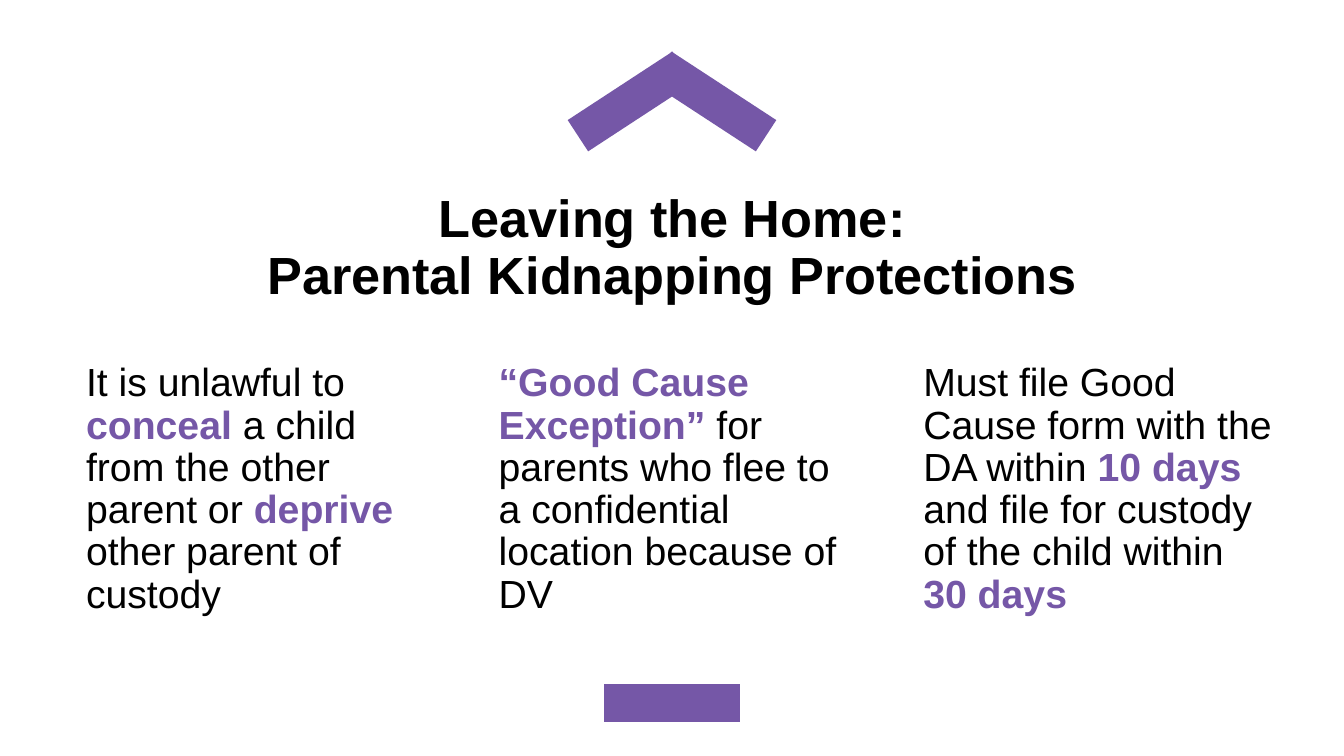
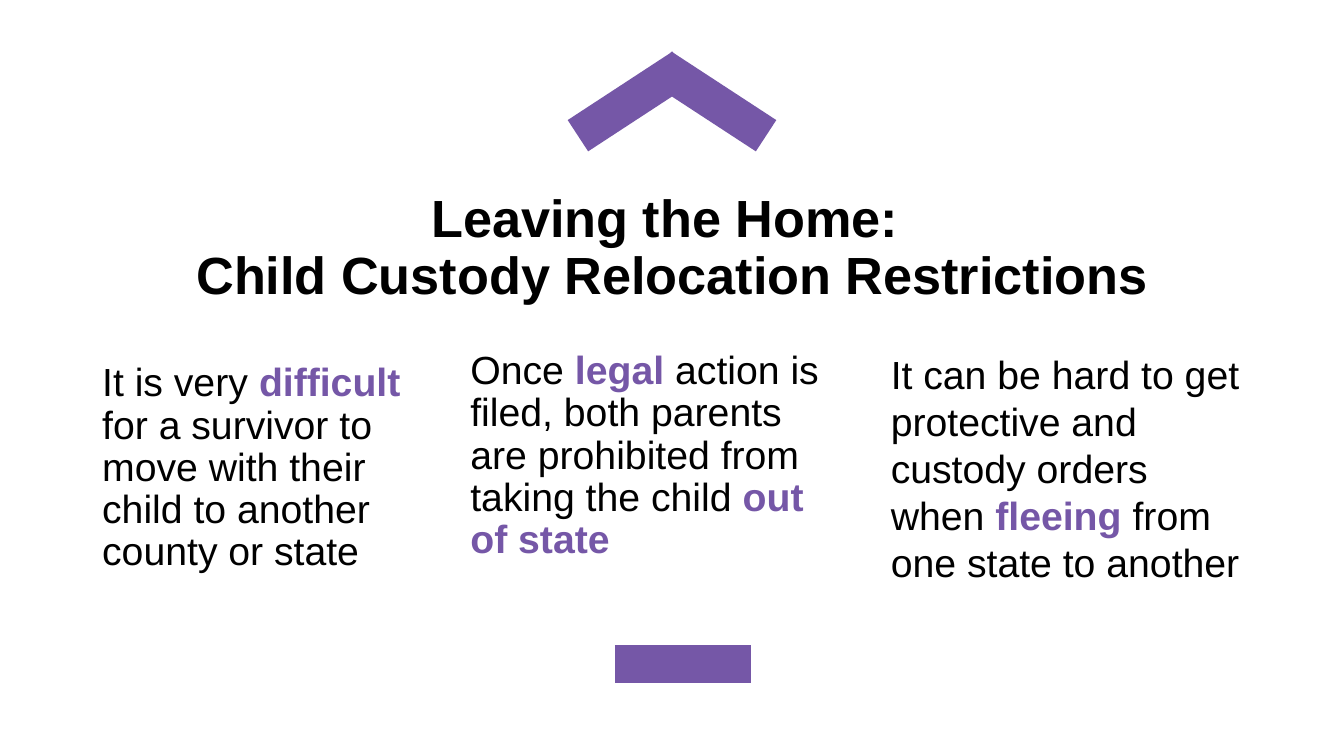
import lxml.etree
import pptx
import pptx.dml.color
import pptx.enum.shapes
import pptx.enum.text
import pptx.oxml.ns
import pptx.util

Inches = pptx.util.Inches
Pt = pptx.util.Pt
FONT = "Arial"
PURPLE = "7557A7"
BLACK = "000000"
TIGHT = (0.07, 0.04)
LOOSE = (0.1, 0.05)
BAR_WIDTH = 1.01


def rgb(value):
    return pptx.dml.color.RGBColor.from_string(value)


def set_frame(tf, insets, anchor):
    tf.word_wrap = True
    tf.auto_size = pptx.enum.text.MSO_AUTO_SIZE.NONE
    tf.vertical_anchor = anchor
    tf.margin_left = tf.margin_right = Inches(insets[0])
    tf.margin_top = tf.margin_bottom = Inches(insets[1])


def place(sp, left, top, width, height):
    sp.left, sp.top = Inches(left), Inches(top)
    sp.width, sp.height = Inches(width), Inches(height)


def add_title(s, text):
    sp = s.shapes.title
    place(sp, 0.69, 1.31, 8.62, 1.09)
    tf = sp.text_frame
    set_frame(tf, TIGHT, pptx.enum.text.MSO_ANCHOR.MIDDLE)
    p = tf.paragraphs[0]
    p.text = text
    p.alignment = pptx.enum.text.PP_ALIGN.CENTER
    p.line_spacing = 0.9
    p.font.name, p.font.size, p.font.bold = FONT, Pt(28), True
    p.font.color.rgb = rgb(BLACK)


def add_column(s, box, text, insets=TIGHT, line_spacing=0.9, space_before=7.5):
    tf = s.shapes.add_textbox(*map(Inches, box)).text_frame
    set_frame(tf, insets, pptx.enum.text.MSO_ANCHOR.TOP)
    p = tf.paragraphs[0]
    p.line_spacing = line_spacing
    p.space_before = Pt(space_before)
    p.font.name, p.font.size = FONT, Pt(21)
    for i, part in enumerate(text.split("*")):
        if part:
            key = i % 2 == 1
            r = p.add_run()
            r.text = part
            r.font.bold = key
            r.font.color.rgb = rgb(PURPLE if key else BLACK)


def add_bar(shapes, x1, y1, x2, y2):
    line = shapes.add_connector(
        pptx.enum.shapes.MSO_CONNECTOR.STRAIGHT,
        Inches(x1), Inches(y1), Inches(x2), Inches(y2))
    line.line.color.rgb = rgb(PURPLE)
    line.line.width = Pt(20)
    lxml.etree.SubElement(line._element.spPr, pptx.oxml.ns.qn("a:effectLst"))


def add_chevron(s):
    group = s.shapes.add_group_shape()
    for start, end in ((4.92, 5.7), (5.08, 4.3)):
        add_bar(group.shapes, start, 0.5, end, 1.01)


def add_slide(prs, title, bar_center, bar_y):
    s = prs.slides.add_slide(prs.slide_layouts[5])
    add_title(s, title)
    add_chevron(s)
    half = BAR_WIDTH / 2
    add_bar(s.shapes, bar_center - half, bar_y, bar_center + half, bar_y)
    return s


def main():
    prs = pptx.Presentation()
    prs.slide_width = Inches(10)
    prs.slide_height = prs.slide_width * 9 // 16

    s = add_slide(prs, "Leaving the Home:\vParental Kidnapping Protections", 5, 5.23)
    add_column(s, (0.57, 2.66, 2.58, 2.24),
               "It is unlawful to *conceal* a child from the other parent or "
               "*deprive *other parent of custody")
    add_column(s, (3.64, 2.66, 2.79, 2.24),
               "*“Good Cause Exception”* for parents who flee to a confidential "
               "location because of DV")
    add_column(s, (6.8, 2.66, 2.77, 2.24),
               "Must file Good Cause form with the DA within *10 days *and file "
               "for custody of the child within *30 days*")

    s = add_slide(prs, "Leaving the Home: \vChild Custody Relocation Restrictions", 5.08, 4.94)
    add_column(s, (0.69, 2.66, 2.41, 2.24),
               "It is very *difficult* for a survivor to move with their child "
               "to another county or state")
    add_column(s, (3.43, 2.57, 2.77, 2.24),
               "Once *legal* action is filed, both parents are prohibited from "
               "taking the child *out of state*")
    add_column(s, (6.53, 2.56, 2.86, 1.87),
               "It can be hard to get protective and custody orders when "
               "*fleeing *from one state to another",
               insets=LOOSE, line_spacing=1.0, space_before=0)

    prs.save("out.pptx")


if __name__ == "__main__":
    main()
